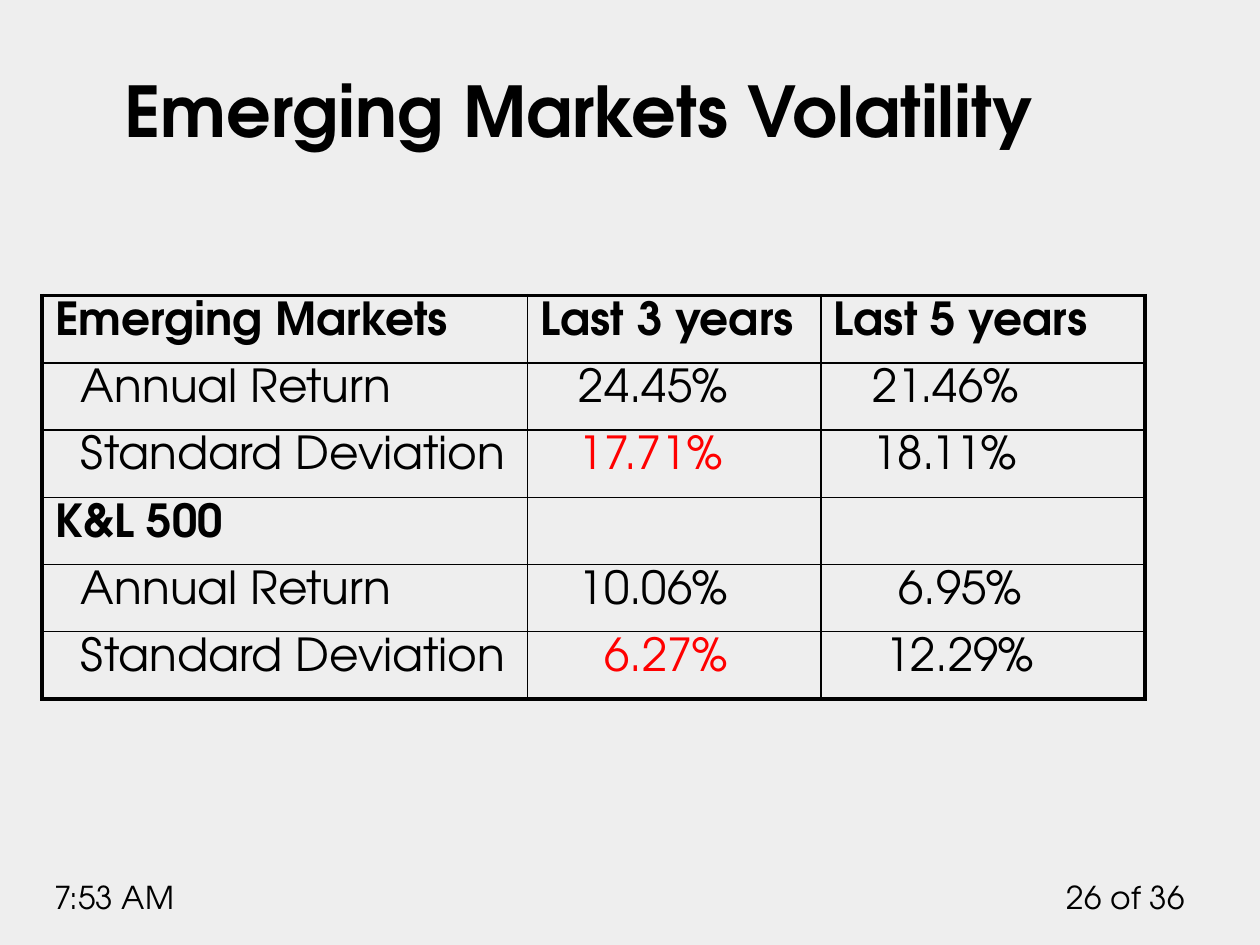
from lxml import etree
from pptx import Presentation
from pptx import util as u
from pptx.dml.color import RGBColor
from pptx.enum import text
from pptx.oxml import ns

COLORS = {"background": "EEEEEE", "ink": "000000", "highlight": "FF0000"}
FONT = "TeX Gyre Adventor"


def write(frame, content, size=26, bold=False, color="ink", align=text.PP_ALIGN.LEFT):
    paragraph = frame.paragraphs[0]
    paragraph.alignment = align
    paragraph.space_before = u.Pt(0)
    run = paragraph.add_run()
    run.text = content
    run.font.name = FONT
    run.font.size = u.Pt(size)
    run.font.bold = bold
    run.font.color.rgb = RGBColor.from_string(COLORS[color])


def set_borders(cell, widths):
    """Draw the cell edges; widths maps L, R, T and B to points."""
    properties = cell._tc.get_or_add_tcPr()
    for side, width in widths.items():
        line = etree.SubElement(properties, ns.qn(f"a:ln{side}"), w=str(u.Pt(width)))
        fill = etree.SubElement(line, ns.qn("a:solidFill"))
        etree.SubElement(fill, ns.qn("a:srgbClr"), val=COLORS["ink"])


presentation = Presentation()
presentation.slide_width = u.Cm(25.4)
presentation.slide_height = u.Cm(19.05)
slide = presentation.slides.add_slide(presentation.slide_layouts[5])
slide.background.fill.solid()
slide.background.fill.fore_color.rgb = RGBColor.from_string(COLORS["background"])

# Title
title = slide.shapes.title
title.left, title.top = u.Cm(0.53), u.Cm(0.64)
title.width, title.height = u.Cm(22.28), u.Cm(2.54)
title.text_frame.vertical_anchor = text.MSO_ANCHOR.BOTTOM
title.text_frame.auto_size = text.MSO_AUTO_SIZE.NONE
write(title.text_frame, "Emerging Markets Volatility", size=40, bold=True,
      align=text.PP_ALIGN.CENTER)

# Time and page number
for content, left, width, align in [
    ("7:53 AM", 0.85, 4.01, text.PP_ALIGN.LEFT),
    ("26 of 36", 21.16, 2.97, text.PP_ALIGN.RIGHT),
]:
    box = slide.shapes.add_textbox(u.Cm(left), u.Cm(17.58), u.Cm(width), u.Cm(1.02))
    box.text_frame.word_wrap = True
    write(box.text_frame, content, size=18, align=align)

# Volatility table: each cell is its text and its indent in steps
ROWS = [
    [("Emerging Markets", 0), ("Last 3 years", 0), ("Last 5 years", 0)],
    [("Annual Return", 2), ("24.45%", 3), ("21.46%", 3)],
    [("Standard Deviation", 2), ("17.71%", 3), ("18.11%", 3)],
    [("K&L 500", 0), ("", 0), ("", 0)],
    [("Annual Return", 2), ("10.06%", 3), ("6.95%", 5)],
    [("Standard Deviation", 2), ("6.27%", 5), ("12.29%", 4)],
]
COLUMN_WIDTHS = [9.78, 5.92, 6.53]
ROW_HEIGHT = 1.35
CELL_MARGIN = 0.26
INDENT_STEP = 0.26
HIGHLIGHTS = {"17.71%", "6.27%"}
THIN, THICK = 1, 2.25

table = slide.shapes.add_table(
    len(ROWS), len(COLUMN_WIDTHS), u.Cm(0.85), u.Cm(5.96),
    u.Cm(sum(COLUMN_WIDTHS)), u.Cm(ROW_HEIGHT * len(ROWS))).table
table.first_row = table.horz_banding = False
for column, width in zip(table.columns, COLUMN_WIDTHS):
    column.width = u.Cm(width)

last_row, last_column = len(ROWS) - 1, len(COLUMN_WIDTHS) - 1
for i, row in enumerate(ROWS):
    table.rows[i].height = u.Cm(ROW_HEIGHT)
    for j, (content, indent) in enumerate(row):
        cell = table.cell(i, j)
        set_borders(cell, {
            "L": THICK if j == 0 else THIN,
            "R": THICK if j == last_column else THIN,
            "T": THICK if i == 0 else THIN,
            "B": THICK if i == last_row else THIN,
        })
        cell.fill.background()
        cell.margin_left = u.Cm(CELL_MARGIN + indent * INDENT_STEP)
        if content:
            write(cell.text_frame, content, bold=indent == 0,
                  color="highlight" if content in HIGHLIGHTS else "ink")

presentation.save("out.pptx")
